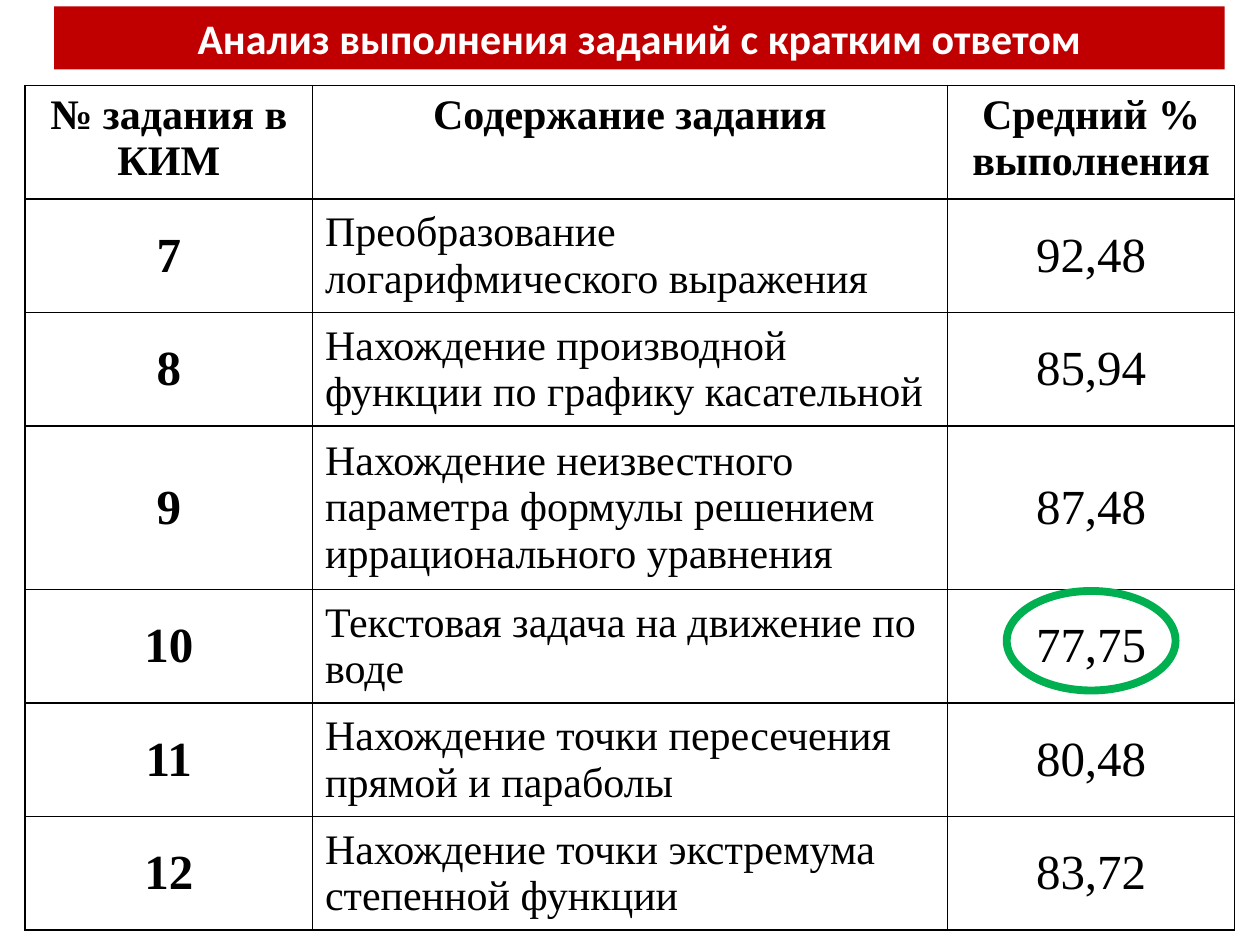
from lxml import etree
from pptx import Presentation
from pptx.dml.color import RGBColor
from pptx.enum.shapes import MSO_SHAPE
from pptx.enum.text import MSO_ANCHOR, PP_ALIGN
from pptx.oxml.ns import qn
from pptx.util import Inches, Pt

OVAL = MSO_SHAPE.OVAL
TOP, MIDDLE = MSO_ANCHOR.TOP, MSO_ANCHOR.MIDDLE
LEFT, CENTER = PP_ALIGN.LEFT, PP_ALIGN.CENTER

RED, GREEN, BLACK, WHITE = "C00000", "00B050", "000000", "FFFFFF"
TITLE_FONT, TABLE_FONT = "Calibri", "Times New Roman"

TITLE = "Анализ выполнения заданий с кратким ответом"
HEADER = ("№ задания в КИМ", "Содержание задания", "Средний % выполнения")
TASKS = [
    ("7", "Преобразование логарифмического выражения", "92,48"),
    ("8", "Нахождение производной функции по графику касательной", "85,94"),
    ("9", "Нахождение неизвестного параметра формулы решением "
          "иррационального уравнения", "87,48"),
    ("10", "Текстовая задача на движение по воде", "77,75"),
    ("11", "Нахождение точки пересечения прямой и параболы", "80,48"),
    ("12", "Нахождение точки экстремума степенной функции", "83,72"),
]
COLUMN_WIDTHS = (2.28, 5.04, 2.28)
ROW_HEIGHTS = (0.9, 0.9, 0.9, 1.3, 0.9, 0.9, 0.9)
MARKED_ROW, MARKED_COLUMN = 4, 2

# Alignment, size and boldness of each column in the task rows
COLUMN_STYLES = ((CENTER, 28, True), (LEFT, 24, False), (CENTER, 28, False))


def color(hex_value):
    return RGBColor.from_string(hex_value)


def place(shape, box):
    shape.left, shape.top, shape.width, shape.height = map(Inches, box)


def write(frame, text, font, size, bold, hex_value, align):
    frame.text = text
    para = frame.paragraphs[0]
    para.alignment = align
    span = para.runs[0].font
    span.name, span.size, span.bold = font, Pt(size), bold
    span.color.rgb = color(hex_value)


def add_borders(cell):
    properties = cell._tc.get_or_add_tcPr()
    for position, side in enumerate(("a:lnL", "a:lnR", "a:lnT", "a:lnB")):
        line = etree.Element(qn(side), w=str(Pt(1)))
        fill = etree.SubElement(line, qn("a:solidFill"))
        etree.SubElement(fill, qn("a:srgbClr"), val=BLACK)
        properties.insert(position, line)


def add_title(page, box):
    title = page.shapes.title
    place(title, box)
    title.fill.solid()
    title.fill.fore_color.rgb = color(RED)
    frame = title.text_frame
    write(frame, TITLE, TITLE_FONT, 24, True, WHITE, CENTER)
    frame.vertical_anchor = MIDDLE
    frame.paragraphs[0].space_after = Pt(6)


def add_results(page, left, top):
    rows = [HEADER] + TASKS
    table = page.shapes.add_table(
        len(rows), len(HEADER), Inches(left), Inches(top),
        Inches(sum(COLUMN_WIDTHS)), Inches(sum(ROW_HEIGHTS))).table
    for column, width in zip(table.columns, COLUMN_WIDTHS):
        column.width = Inches(width)
    for row, height in zip(table.rows, ROW_HEIGHTS):
        row.height = Inches(height)
    for row_index, texts in enumerate(rows):
        for column_index, text in enumerate(texts):
            cell = table.cell(row_index, column_index)
            is_header = row_index == 0
            align, size, bold = (
                (CENTER, 24, True) if is_header else COLUMN_STYLES[column_index])
            write(cell.text_frame, text, TABLE_FONT, size, bold, BLACK, align)
            cell.vertical_anchor = TOP if is_header else MIDDLE
            if column_index == MARKED_COLUMN and not is_header:
                cell.margin_left = cell.margin_right = Inches(0.04)
                cell.margin_top = cell.margin_bottom = 0
            cell.fill.solid()
            cell.fill.fore_color.rgb = color(WHITE)
            add_borders(cell)


def add_ring(page, table_left, table_top):
    """Ring the lowest result inside its table cell."""
    width, height = 1.34, 0.79
    center = (table_left + sum(COLUMN_WIDTHS[:MARKED_COLUMN])
              + COLUMN_WIDTHS[MARKED_COLUMN] / 2)
    top = table_top + sum(ROW_HEIGHTS[:MARKED_ROW]) + 0.01
    ring = page.shapes.add_shape(OVAL, 0, 0, 0, 0)
    place(ring, (center - width / 2, top, width, height))
    ring.shadow.inherit = False
    ring.fill.background()
    ring.line.color.rgb = color(GREEN)
    ring.line.width = Pt(4.5)


def main():
    deck = Presentation()
    deck.slide_width, deck.slide_height = Inches(10), Inches(7.5)
    page = deck.slides.add_slide(deck.slide_layouts[5])
    table_left, table_top = 0.2, 0.68
    add_title(page, (0.43, 0.05, 9.29, 0.5))
    add_results(page, table_left, table_top)
    add_ring(page, table_left, table_top)
    deck.save("out.pptx")


if __name__ == "__main__":
    main()
